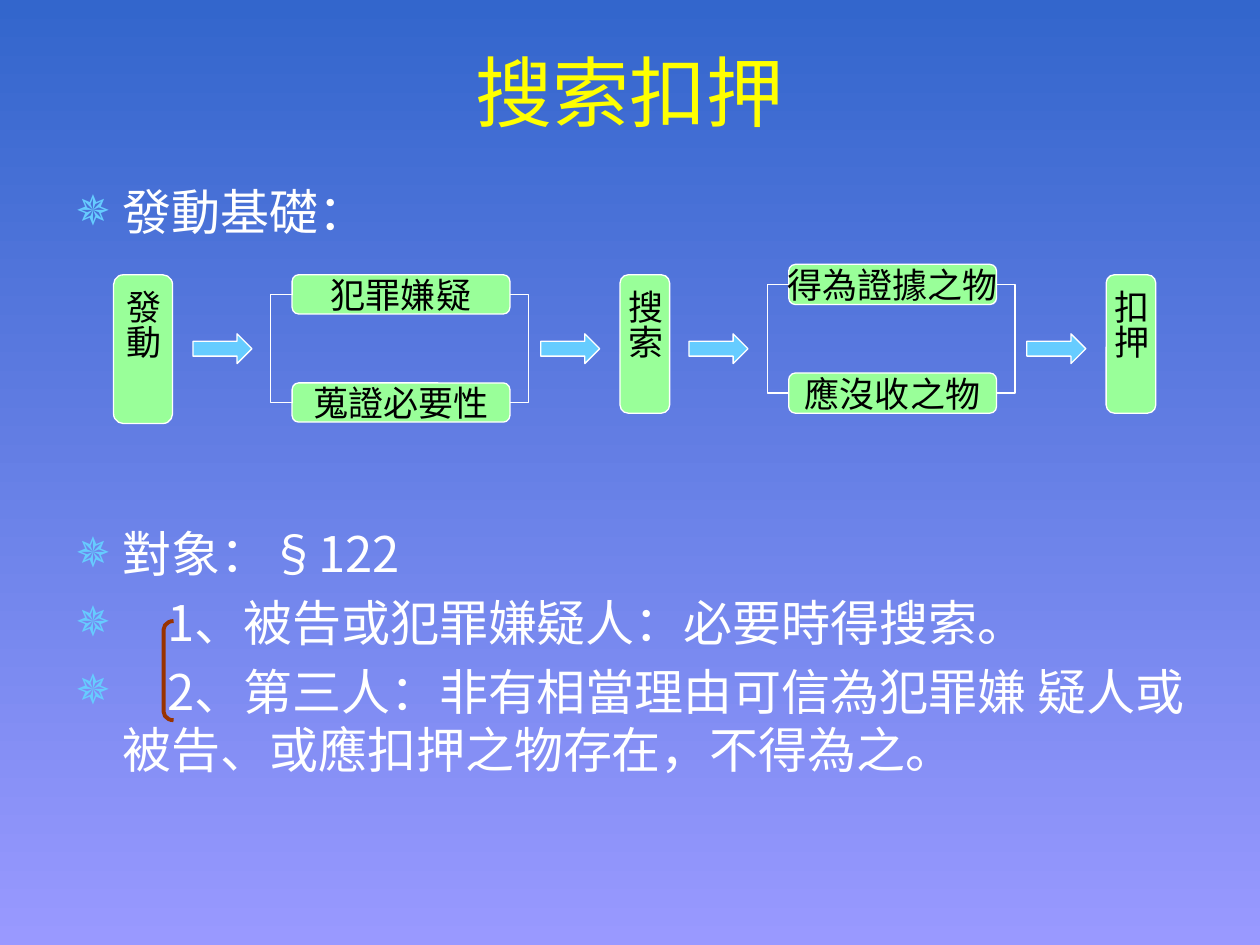
"""Build the search-and-seizure slide with its two-branch flow diagram."""
from dataclasses import dataclass

from lxml.etree import SubElement
from pptx import Presentation
from pptx.dml.color import RGBColor
from pptx.enum.shapes import MSO_SHAPE
from pptx.enum.text import MSO_ANCHOR, MSO_AUTO_SIZE, PP_ALIGN
from pptx.oxml.ns import qn
from pptx.util import Cm, Pt

BLUE = RGBColor(0x33, 0x66, 0xCC)
LILAC = RGBColor(0x99, 0x99, 0xFF)
YELLOW = RGBColor(0xFF, 0xFF, 0x00)
WHITE = RGBColor(0xFF, 0xFF, 0xFF)
BLACK = RGBColor(0x00, 0x00, 0x00)
GREEN = RGBColor(0x99, 0xFF, 0x99)
SKY = RGBColor(0x66, 0xCC, 0xFF)
BROWN = RGBColor(0x99, 0x33, 0x00)


@dataclass
class Box:
    text: str
    x: float
    y: float
    w: float
    h: float
    vertical: bool = False

    @property
    def mid(self) -> float:
        return self.y + self.h / 2


@dataclass
class Item:
    text: str
    font: str
    before: float
    tab: float = 0


STEPS = [
    Box("發動", 2.29, 5.54, 1.19, 3, True),
    Box("搜索", 12.5, 5.54, 1, 2.79, True),
    Box("扣押", 22.3, 5.54, 1, 2.79, True),
]
BRANCHES = [
    (Box("犯罪嫌疑", 5.89, 5.54, 4.39, 0.79), Box("蒐證必要性", 5.89, 7.72, 4.39, 0.79)),
    (Box("得為證據之物", 15.9, 5.33, 4.19, 0.81), Box("應沒收之物", 15.9, 7.52, 4.19, 0.81)),
]
ARROWS = [3.89, 10.9, 13.89, 20.7]
ITEMS = [
    Item("發動基礎：", "Arial", 0),
    Item("對象：§122", "Noto Sans CJK SC", 162),
    Item("\t1、被告或犯罪嫌疑人：必要時得搜索。", "Noto Sans CJK SC", 5.6, 1.85),
    Item("\t2、第三人：非有相當理由可信為犯罪嫌 疑人或被告、或應扣押之物存在，不得為之。",
         "Noto Sans CJK SC", 5.6, 1.85),
]


def place(sp, x: float, y: float, w: float, h: float) -> None:
    sp.left, sp.top, sp.width, sp.height = Cm(x), Cm(y), Cm(w), Cm(h)


def style_font(p, name: str, size: float, color: RGBColor) -> None:
    for r in p.runs:
        r.font.name, r.font.size = name, Pt(size)
        r.font.color.rgb = color


def add_shape(s, kind, x: float, y: float, w: float, h: float, fill: RGBColor):
    sp = s.shapes.add_shape(kind, Cm(x), Cm(y), Cm(w), Cm(h))
    sp.shadow.inherit = False
    sp.fill.solid()
    sp.fill.fore_color.rgb = fill
    sp.line.color.rgb, sp.line.width = WHITE, Pt(0.75)
    return sp


def add_box(s, box: Box) -> None:
    sp = add_shape(s, MSO_SHAPE.FLOWCHART_ALTERNATE_PROCESS,
                   box.x, box.y, box.w, box.h, GREEN)
    tf = sp.text_frame
    tf.text, tf.word_wrap = box.text, False
    tf.vertical_anchor = MSO_ANCHOR.MIDDLE
    if box.vertical:
        tf._txBody.bodyPr.set("vert", "eaVert")
    p = tf.paragraphs[0]
    p.alignment = PP_ALIGN.CENTER
    style_font(p, "Roboto", 20, BLACK)


def add_bracket(s, edge: float, spine: float, top: float, bottom: float) -> None:
    fb = s.shapes.build_freeform(Cm(edge), Cm(top))
    fb.add_line_segments([(Cm(spine), Cm(top)), (Cm(spine), Cm(bottom)),
                          (Cm(edge), Cm(bottom))], close=False)
    sp = fb.convert_to_shape()
    sp.shadow.inherit = False
    sp.fill.background()
    sp.line.color.rgb, sp.line.width = WHITE, Pt(0.75)


def add_branch(s, upper: Box, lower: Box) -> None:
    right = upper.x + upper.w
    for edge, spine in ((upper.x, upper.x - 0.43), (right, right + 0.37)):
        add_bracket(s, edge, spine, upper.mid, lower.mid)
    for box in (upper, lower):
        add_box(s, box)


def format_item(p, item: Item) -> None:
    p.text, p.space_before = item.text, Pt(item.before)
    pPr = p._p.get_or_add_pPr()
    pPr.set("marL", str(Cm(0.95)))
    pPr.set("indent", str(-Cm(0.95)))
    SubElement(SubElement(pPr, qn("a:buClr")), qn("a:srgbClr"), val=str(SKY))
    SubElement(pPr, qn("a:buSzPct"), val="85000")
    SubElement(pPr, qn("a:buChar"), char="✵")
    if item.tab:
        tabs = SubElement(pPr, qn("a:tabLst"))
        SubElement(tabs, qn("a:tab"), pos=str(Cm(item.tab)), algn="l")
    style_font(p, item.font, 28, WHITE)


def main() -> None:
    prs = Presentation()
    prs.slide_width, prs.slide_height = Cm(25.4), Cm(19.05)
    s = prs.slides.add_slide(prs.slide_layouts[1])
    bg = s.background.fill
    bg.gradient()
    bg.gradient_angle = 270
    for stop, color, position in zip(bg.gradient_stops, (BLUE, LILAC), (0, 1)):
        stop.color.rgb, stop.position = color, position

    title, body = s.placeholders
    place(title, 0.84, 0.64, 23.72, 2.36)
    title.text_frame.text = "搜索扣押"
    title.text_frame.vertical_anchor = MSO_ANCHOR.MIDDLE
    title.text_frame.paragraphs[0].alignment = PP_ALIGN.CENTER
    style_font(title.text_frame.paragraphs[0], "Arial", 44, YELLOW)

    place(body, 1.27, 3.53, 22.86, 13.51)
    tf = body.text_frame
    tf.auto_size = MSO_AUTO_SIZE.NONE
    for i, item in enumerate(ITEMS):
        format_item(tf.add_paragraph() if i else tf.paragraphs[0], item)

    for box in STEPS:
        add_box(s, box)
    for upper, lower in BRANCHES:
        add_branch(s, upper, lower)
    for x in ARROWS:
        add_shape(s, MSO_SHAPE.RIGHT_ARROW, x, 6.73, 1.19, 0.6, SKY)

    sp = s.shapes.add_shape(MSO_SHAPE.LEFT_BRACKET, Cm(3.3), Cm(12.52), Cm(0.2), Cm(2))
    sp.adjustments[0] = 0.84
    sp.shadow.inherit = False
    sp.fill.background()
    sp.line.color.rgb, sp.line.width = BROWN, Pt(2.25)
    prs.save("out.pptx")


if __name__ == "__main__":
    main()
